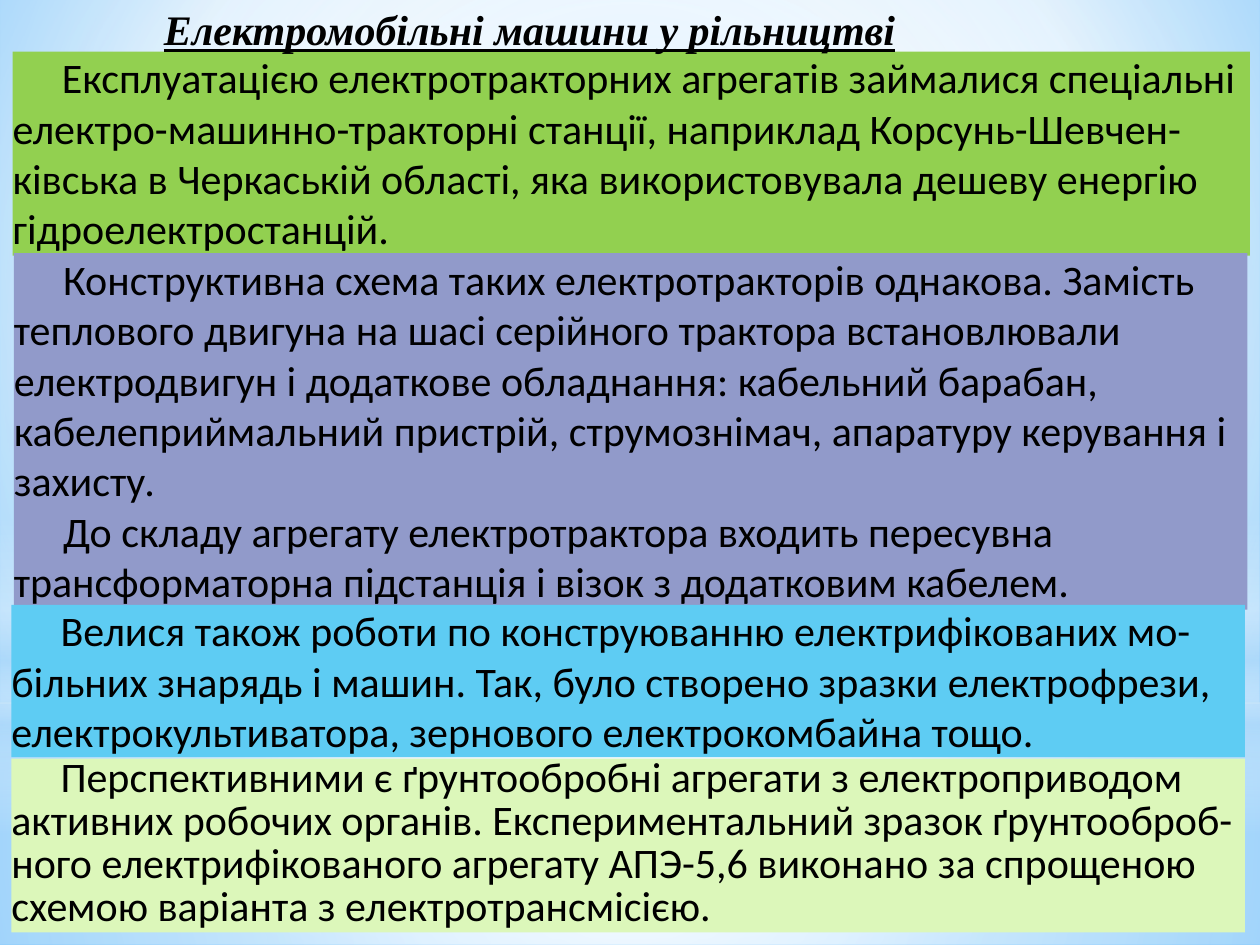
from lxml import etree
from pptx import Presentation
from pptx.dml.color import RGBColor
from pptx.enum import shapes, text
from pptx.oxml import ns
from pptx.util import Inches, Pt

BLACK = RGBColor(0x00, 0x00, 0x00)
GREEN = RGBColor(0x92, 0xD0, 0x50)
VIOLET = RGBColor(0x91, 0x9A, 0xCA)
BLUE = RGBColor(0x5E, 0xCC, 0xF3)
LIME = RGBColor(0xDC, 0xF7, 0xBA)
WHITE = RGBColor(0xFF, 0xFF, 0xFF)
PALE = RGBColor(0xB4, 0xDC, 0xFA)
SKY = RGBColor(0x9E, 0xD5, 0xFF)
AZURE = RGBColor(0x5B, 0xB9, 0xFF)

TITLE = "Електромобільні машини у рільництві"

# (left, top, width, height), fill, line spacing, paragraphs
PANELS = [
    ((0.1, 0.41, 9.82, 1.62), GREEN, 1, [
        "Експлуатацією електротракторних агрегатів займалися спеціальні "
        "електро-машинно-тракторні станції, наприклад Корсунь-Шевчен-ківська "
        "в Черкаській області, яка використовувала дешеву енергію "
        "гідроелектростанцій."]),
    ((0.11, 2.01, 9.79, 2.83), VIOLET, 1, [
        "Конструктивна схема таких електротракторів однакова. Замість "
        "теплового двигуна на шасі серійного трактора встановлювали "
        "електродвигун і додаткове обладнання: кабельний барабан, "
        "кабелеприймальний пристрій, струмознімач, апаратуру керування і "
        "захисту.",
        "До складу агрегату електротрактора входить пересувна "
        "трансформаторна підстанція і візок з додатковим кабелем."]),
    ((0.09, 4.8, 9.79, 1.21), BLUE, 1, [
        "Велися також роботи по конструюванню електрифікованих мо-більних "
        "знарядь і машин. Так, було створено зразки електрофрези, "
        "електрокультиватора, зернового електрокомбайна тощо."]),
    ((0.09, 6.02, 9.79, 1.38), LIME, 0.85, [
        "Перспективними є ґрунтообробні агрегати з електроприводом активних "
        "робочих органів. Експериментальний зразок ґрунтооброб-ного "
        "електрифікованого агрегату АПЭ-5,6 виконано за спрощеною схемою "
        "варіанта з електротрансмісією."]),
]

# Gradient stops: position %, colour, opacity %
BACKDROP = [(0, SKY, 100), (60, WHITE, 100), (100, AZURE, 100)]
CENTRE = (50, 50, 50, 50)
RECT, OVAL = shapes.MSO_SHAPE.RECTANGLE, shapes.MSO_SHAPE.OVAL
# shape, (left, top, width, height), stops, focus of a radial gradient
GLOWS = [
    (RECT, (0, 5.58, 10, 1.92),
     [(0, WHITE, 91), (37, WHITE, 76), (100, PALE, 79)], CENTRE),
    (RECT, (0, 0, 10, 5.58),
     [(0, WHITE, 89), (48, WHITE, 62), (100, PALE, 79)], CENTRE),
    (RECT, (0, 4.12, 10, 2.5),
     [(0, WHITE, 0), (29, WHITE, 30), (45, PALE, 40), (55, WHITE, 26),
      (65, PALE, 60), (100, WHITE, 0)], None),
    (OVAL, (0, 1.75, 10, 5.58), [(0, WHITE, 100), (56, WHITE, 0)], CENTRE),
]


def set_gradient(fill, element, stops, focus):
    """Fill with stops, radial towards focus or vertical if focus is None."""
    fill.solid()
    solid = element.xpath(".//a:solidFill")[0]
    grad = etree.Element(ns.qn("a:gradFill"), rotWithShape="1")
    gs_list = etree.SubElement(grad, ns.qn("a:gsLst"))
    for pos, color, opacity in stops:
        gs = etree.SubElement(gs_list, ns.qn("a:gs"), pos=str(pos * 1000))
        clr = etree.SubElement(gs, ns.qn("a:srgbClr"), val=str(color))
        if opacity < 100:
            etree.SubElement(clr, ns.qn("a:alpha"), val=str(opacity * 1000))
    if focus:
        radial = etree.SubElement(grad, ns.qn("a:path"))
        radial.set("path", "circle")
        sides = {k: str(v * 1000) for k, v in zip("ltrb", focus)}
        etree.SubElement(radial, ns.qn("a:fillToRect"), **sides)
    else:
        etree.SubElement(grad, ns.qn("a:lin"), ang="5400000", scaled="0")
    solid.getparent().replace(solid, grad)


def add_plain_shape(s, kind, box):
    sp = s.shapes.add_shape(kind, *map(Inches, box))
    sp.shadow.inherit = False
    sp.line.fill.background()
    return sp


def write(tf, paragraphs, font="Calibri", indent=0.0, spacing=1, wrap=True,
          emphasis=False):
    tf.margin_left = tf.margin_top = tf.margin_right = tf.margin_bottom = 0
    tf.word_wrap = wrap
    tf.auto_size = text.MSO_AUTO_SIZE.SHAPE_TO_FIT_TEXT
    tf.vertical_anchor = text.MSO_ANCHOR.TOP
    for i, words in enumerate(paragraphs):
        p = tf.add_paragraph() if i else tf.paragraphs[0]
        p.alignment = text.PP_ALIGN.LEFT
        p.line_spacing = spacing
        p._p.get_or_add_pPr().set("indent", str(Inches(indent)))
        r = p.add_run()
        r.text = words
        r.font.name = font
        r.font.size = Pt(24)
        r.font.color.rgb = BLACK
        if emphasis:
            r.font.bold = r.font.italic = r.font.underline = True


def main():
    prs = Presentation()
    prs.slide_width, prs.slide_height = Inches(10), Inches(7.5)
    s = prs.slides.add_slide(prs.slide_layouts[5])
    set_gradient(s.background.fill, s._element, BACKDROP, (20, 10, 20, 60))

    for kind, box, stops, focus in GLOWS:
        sp = add_plain_shape(s, kind, box)
        set_gradient(sp.fill, sp._element, stops, focus)

    for box, color, spacing, paragraphs in PANELS:
        sp = add_plain_shape(s, RECT, box)
        sp.fill.solid()
        sp.fill.fore_color.rgb = color
        write(sp.text_frame, paragraphs, indent=0.39, spacing=spacing)

    title = s.shapes.title
    title.left, title.top = Inches(1.3), Inches(0.03)
    title.width, title.height = Inches(6.02), Inches(0.4)
    write(title.text_frame, [TITLE], font="Times New Roman", wrap=False,
          emphasis=True)
    s.shapes._spTree.append(title._element)  # in front of the panels

    prs.save("out.pptx")


if __name__ == "__main__":
    main()
